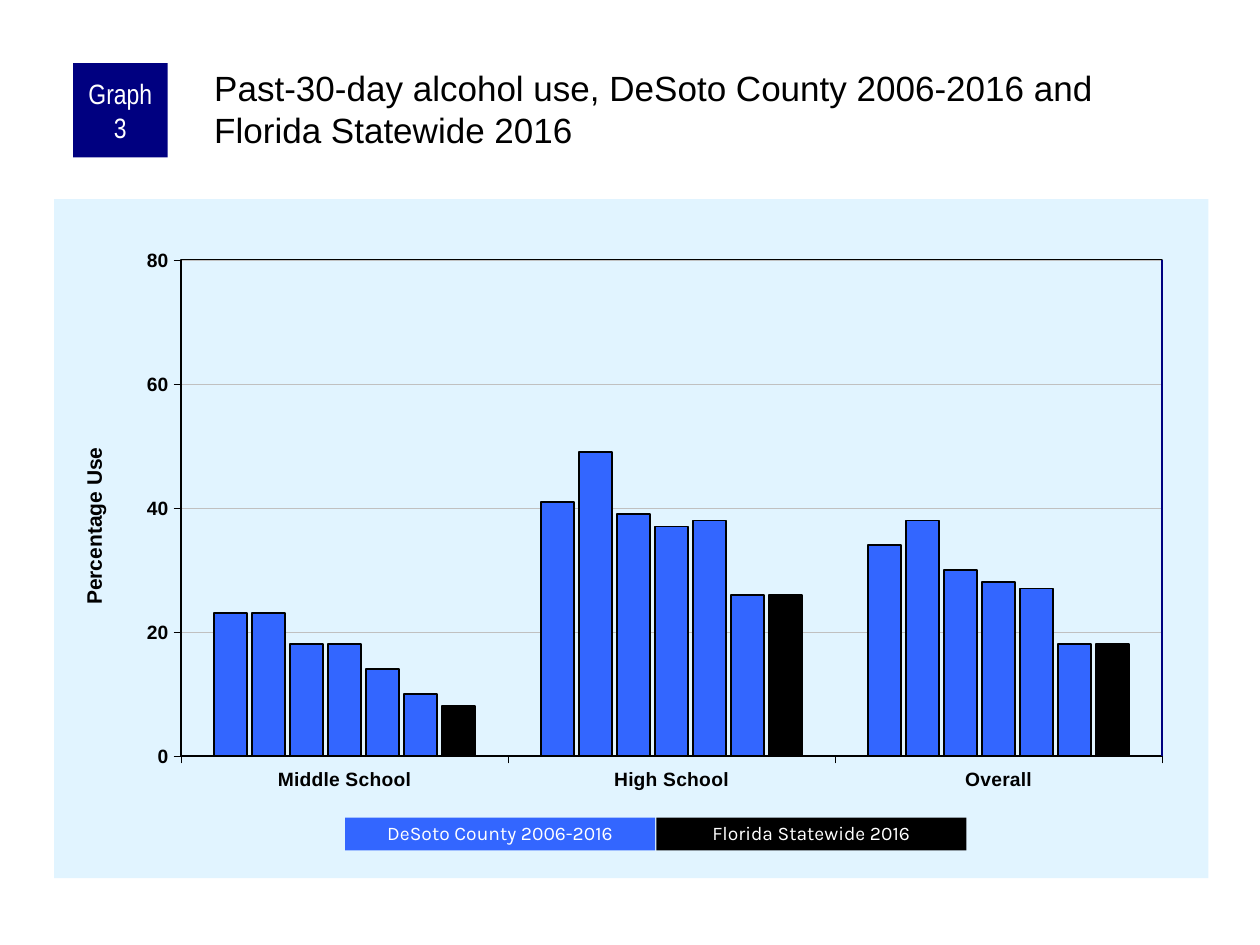
from dataclasses import dataclass

import pptx
import pptx.chart.data
import pptx.dml.color
import pptx.enum.chart
import pptx.enum.shapes
import pptx.enum.text
import pptx.oxml
import pptx.oxml.ns
import pptx.util
from pptx.util import Inches

COLORS = {
    "black": "000000",
    "white": "FFFFFF",
    "navy": "000080",
    "county": "3366FF",
    "panel": "E1F4FF",
    "grid": "C0C0C0",
}
CATEGORIES = ["Middle School", "High School", "Overall"]
COUNTY_VALUES = [
    (23, 41, 34),
    (23, 49, 38),
    (18, 39, 30),
    (18, 37, 28),
    (14, 38, 27),
    (10, 26, 18),
]
STATE_VALUES = (8, 26, 18)

CHART_LEFT, CHART_TOP, CHART_WIDTH, CHART_HEIGHT = 0.43, 1.58, 9.16, 5.39
PLOT_X, PLOT_Y, PLOT_WIDTH, PLOT_HEIGHT = 0.11, 0.09, 0.85, 0.73


@dataclass
class Label:
    text: str
    left: float
    top: float
    width: float
    height: float
    fill: str
    font: str
    size: int
    inset: float = 0.1
    line_spacing: float = 1.0


LABELS = [
    Label("Graph 3", 0.58, 0.5, 0.75, 0.75, "navy", "Arial Narrow", 16, inset=0.05),
    Label("DeSoto County 2006-2016", 2.74, 6.49, 2.46, 0.26, "county", "Karla", 11,
          line_spacing=0.9),
    Label("Florida Statewide 2016", 5.21, 6.49, 2.46, 0.26, "black", "Karla", 11,
          line_spacing=0.9),
]


def rgb(name: str) -> pptx.dml.color.RGBColor:
    return pptx.dml.color.RGBColor.from_string(COLORS[name])


def set_font(font, name: str, size: float, color: str, bold: bool = False) -> None:
    font.name = name
    font.size = pptx.util.Pt(size)
    font.bold = bold
    font.color.rgb = rgb(color)


def set_line(line, color: str, width: float) -> None:
    line.color.rgb = rgb(color)
    line.width = pptx.util.Pt(width)


def chart_xml(tag: str, content: str):
    namespaces = pptx.oxml.ns.nsdecls("c", "a")
    return pptx.oxml.parse_xml(f"<c:{tag} {namespaces}>{content}</c:{tag}>")


def manual_layout(x: float, y: float, size: str = "", target: str = ""):
    return chart_xml(
        "layout",
        f'<c:manualLayout>{target}<c:xMode val="edge"/><c:yMode val="edge"/>'
        f'<c:x val="{x}"/><c:y val="{y}"/>{size}</c:manualLayout>',
    )


def solid_fill(color: str) -> str:
    return f'<a:solidFill><a:srgbClr val="{COLORS[color]}"/></a:solidFill>'


def style_areas(chart) -> None:
    """Place the plot and the axis title, and style the chart and plot areas."""
    chart_space = chart.element if hasattr(chart, "element") else chart._chartSpace
    for layout in chart_space.xpath("c:chart/c:plotArea/c:layout | .//c:valAx/c:title/c:layout"):
        layout.getparent().remove(layout)

    plot_area = chart_space.xpath("c:chart/c:plotArea")[0]
    plot_area.insert(0, manual_layout(
        PLOT_X, PLOT_Y,
        size=f'<c:w val="{PLOT_WIDTH}"/><c:h val="{PLOT_HEIGHT}"/>',
        target='<c:layoutTarget val="inner"/>',
    ))
    plot_area.append(chart_xml(
        "spPr", f'<a:noFill/><a:ln w="12700">{solid_fill("black")}</a:ln>'))
    chart_space.xpath(".//c:valAx/c:title/c:tx")[0].addnext(manual_layout(0.02, 0.36))
    chart_space.xpath("c:chart")[0].addnext(chart_xml(
        "spPr", f'{solid_fill("panel")}<a:ln><a:noFill/></a:ln>'))


def add_usage_chart(slide) -> None:
    data = pptx.chart.data.CategoryChartData()
    data.categories = CATEGORIES
    for number, values in enumerate([*COUNTY_VALUES, STATE_VALUES], start=1):
        data.add_series(f"Series {number}", values)
    chart = slide.shapes.add_chart(
        pptx.enum.chart.XL_CHART_TYPE.COLUMN_CLUSTERED,
        Inches(CHART_LEFT), Inches(CHART_TOP), Inches(CHART_WIDTH), Inches(CHART_HEIGHT),
        data,
    ).chart
    chart.has_legend = False
    chart.has_title = False
    set_font(chart.font, "Arial", 8, "black")

    plot = chart.plots[0]
    plot.gap_width = 200
    plot.overlap = -15
    plot.vary_by_categories = False
    for index, series in enumerate(plot.series):
        series.format.fill.solid()
        series.format.fill.fore_color.rgb = rgb(
            "county" if index < len(COUNTY_VALUES) else "black")
        set_line(series.format.line, "black", 1)

    for axis in (chart.category_axis, chart.value_axis):
        axis.major_tick_mark = pptx.enum.chart.XL_TICK_MARK.OUTSIDE
        axis.minor_tick_mark = pptx.enum.chart.XL_TICK_MARK.NONE
        set_font(axis.tick_labels.font, "Arial", 11, "black", bold=True)
        set_line(axis.format.line, "black", 0.25)

    value_axis = chart.value_axis
    value_axis.minimum_scale = 0
    value_axis.maximum_scale = 80
    value_axis.major_unit = 20
    value_axis.has_major_gridlines = True
    set_line(value_axis.major_gridlines.format.line, "grid", 0.25)
    title_frame = value_axis.axis_title.text_frame
    title_frame.text = "Percentage Use"
    set_font(title_frame.paragraphs[0].font, "Arial", 12, "black", bold=True)
    style_areas(chart)


def add_right_edge(slide) -> None:
    x = Inches(CHART_LEFT + (PLOT_X + PLOT_WIDTH) * CHART_WIDTH)
    top = Inches(CHART_TOP + PLOT_Y * CHART_HEIGHT)
    bottom = top + Inches(PLOT_HEIGHT * CHART_HEIGHT)
    edge = slide.shapes.add_connector(
        pptx.enum.shapes.MSO_CONNECTOR.STRAIGHT, x, top, x, bottom)
    set_line(edge.line, "navy", 1)
    edge.element.spPr.append(pptx.oxml.parse_xml(
        f'<a:effectLst {pptx.oxml.ns.nsdecls("a")}/>'))


def add_label(slide, label: Label) -> None:
    shape = slide.shapes.add_shape(
        pptx.enum.shapes.MSO_SHAPE.RECTANGLE,
        Inches(label.left), Inches(label.top), Inches(label.width), Inches(label.height))
    shape.shadow.inherit = False
    shape.fill.solid()
    shape.fill.fore_color.rgb = rgb(label.fill)
    shape.line.fill.background()
    frame = shape.text_frame
    frame.word_wrap = True
    frame.vertical_anchor = pptx.enum.text.MSO_ANCHOR.MIDDLE
    frame.margin_left = frame.margin_right = Inches(label.inset)
    frame.margin_top = frame.margin_bottom = 0
    frame.text = label.text
    paragraph = frame.paragraphs[0]
    paragraph.alignment = pptx.enum.text.PP_ALIGN.CENTER
    paragraph.line_spacing = label.line_spacing
    set_font(paragraph.font, label.font, label.size, "white")


def add_heading(slide, text: str) -> None:
    box = slide.shapes.add_textbox(Inches(1.67), Inches(0.5), Inches(7.92), Inches(0.83))
    frame = box.text_frame
    frame.word_wrap = True
    frame.margin_left = frame.margin_top = Inches(0.03)
    frame.margin_right = frame.margin_bottom = 0
    frame.text = text
    set_font(frame.paragraphs[0].font, "Arial", 20, "black")


def main() -> None:
    presentation = pptx.Presentation()
    presentation.slide_width = Inches(10)
    presentation.slide_height = Inches(7.5)
    slide = presentation.slides.add_slide(presentation.slide_layouts[6])
    add_usage_chart(slide)
    add_right_edge(slide)
    add_heading(slide, "Past-30-day alcohol use, DeSoto County 2006-2016 and Florida Statewide 2016")
    for label in LABELS:
        add_label(slide, label)
    presentation.save("out.pptx")


if __name__ == "__main__":
    main()
